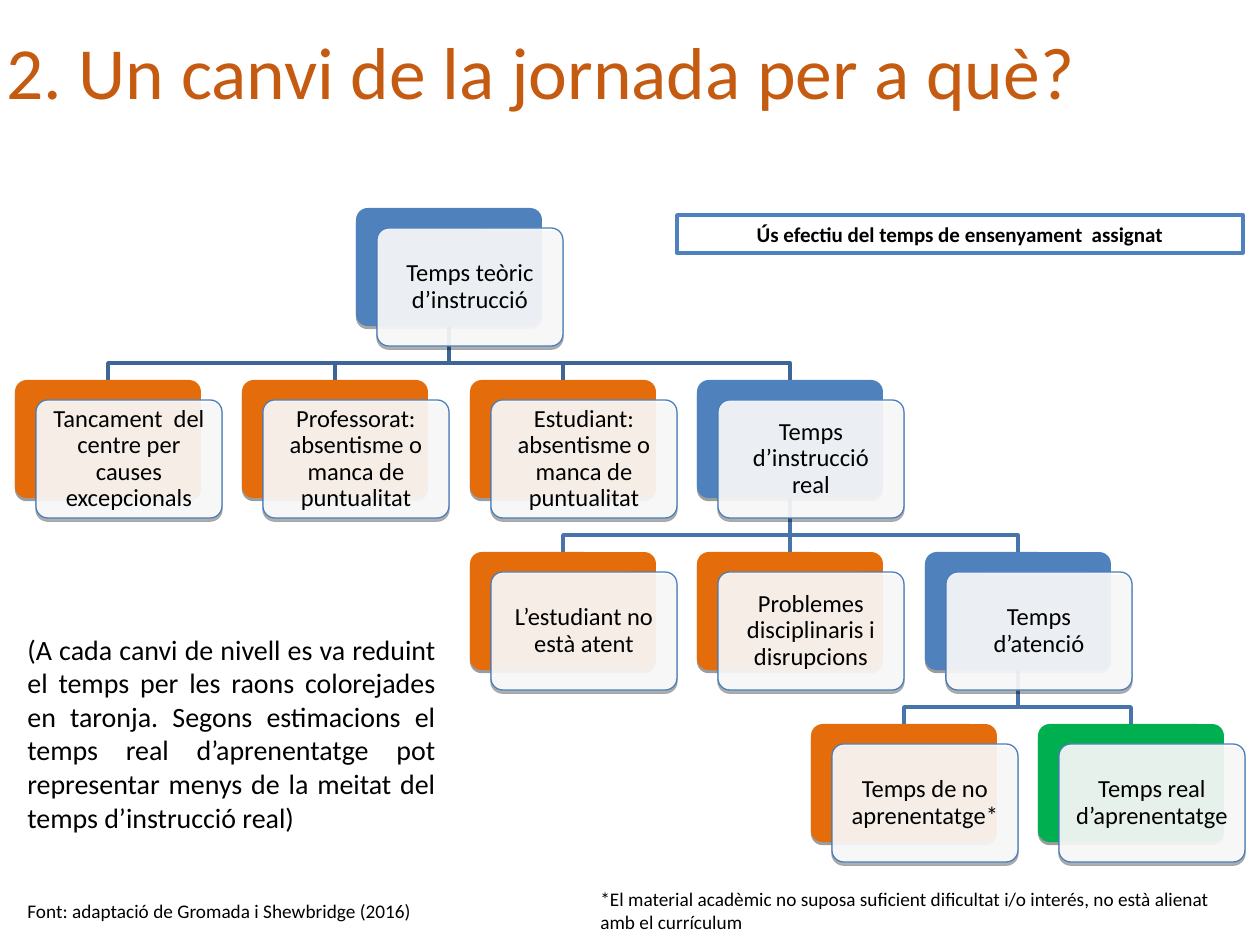
from lxml import etree
from pptx import Presentation
from pptx import util as u
from pptx.dml import color
from pptx.enum import shapes, text
from pptx.oxml import ns

SCALE = 914400 / 126
COLORS = {
    "blue": "4F81BD", "orange": "E46C0A", "green": "00B050", "white": "FFFFFF",
    "black": "000000", "edge": "4A7EBB", "title": "C55A11",
    "upper_link": "3D6696", "lower_link": "4774AB",
}
CARD_W, CARD_H = 186, 118
LEFT, TOP, COLUMN, ROW = 15, 208, 227.4, 172
PANEL_DX, PANEL_DY, TRUNK = 21, 20, 37

CARDS = {
    "theory": (1.5, 0, "blue", "Temps teòric d’instrucció"),
    "closure": (0, 1, "orange", "Tancament  del centre per causes excepcionals"),
    "teachers": (1, 1, "orange", "Professorat: absentisme o manca de puntualitat"),
    "student": (2, 1, "orange", "Estudiant: absentisme o manca de puntualitat"),
    "instruction": (3, 1, "blue", "Temps d’instrucció real"),
    "inattentive": (2, 2, "orange", "L’estudiant no està atent"),
    "disruptions": (3, 2, "orange", "Problemes disciplinaris i disrupcions"),
    "attention": (4, 2, "blue", "Temps d’atenció"),
    "no_learning": (3.5, 3, "orange", "Temps de no aprenentatge*"),
    "learning": (4.5, 3, "green", "Temps real d’aprenentatge"),
}
LINKS = [
    ("theory", ["closure", "teachers", "student", "instruction"], "upper_link"),
    ("instruction", ["inattentive", "disruptions", "attention"], "lower_link"),
    ("attention", ["no_learning", "learning"], "lower_link"),
]


def px(length):
    return u.Emu(round(length * SCALE))


class SlidePainter:
    """Draws the styled elements of the teaching-time tree on one slide."""

    def __init__(self, slide, font="Calibri"):
        self.slide = slide
        self.font = font

    def rgb(self, name):
        return color.RGBColor.from_string(COLORS[name])

    def set_text(self, frame, words, size, ink="black", align=text.PP_ALIGN.LEFT, bold=False):
        frame.word_wrap = True
        para = frame.paragraphs[0]
        para.text = words
        para.alignment = align
        para.font.name = self.font
        para.font.size = u.Pt(size)
        para.font.bold = bold
        para.font.color.rgb = self.rgb(ink)
        return para

    def label(self, area, words, size, anchor=text.MSO_ANCHOR.TOP, **style):
        box = self.slide.shapes.add_textbox(*map(px, area))
        box.text_frame.vertical_anchor = anchor
        self.set_text(box.text_frame, words, size, **style)

    def block(self, kind, area, fill, edge=None, width=0.75):
        box = self.slide.shapes.add_shape(kind, *map(px, area))
        box.shadow.inherit = False
        box.fill.solid()
        box.fill.fore_color.rgb = self.rgb(fill)
        if edge:
            box.line.color.rgb = self.rgb(edge)
            box.line.width = u.Pt(width)
        else:
            box.line.fill.background()
        return box

    def rounded(self, area, fill, edge=None, shade=35):
        box = self.block(shapes.MSO_SHAPE.ROUNDED_RECTANGLE, area, fill, edge)
        box.adjustments[0] = 0.1
        effects = box.element.spPr.find(ns.qn("a:effectLst"))
        shadow = etree.SubElement(effects, ns.qn("a:outerShdw"), blurRad="0",
                                  dist=str(u.Pt(1.8)), dir="5400000", rotWithShape="0")
        tone = etree.SubElement(shadow, ns.qn("a:srgbClr"), val=COLORS["black"])
        etree.SubElement(tone, ns.qn("a:alpha"), val=str(shade * 1000))
        return box

    def card(self, column, row, fill, words):
        left, top = round(LEFT + COLUMN * column), TOP + ROW * row
        back = self.rounded((left, top, CARD_W, CARD_H), fill, shade=38 if row else 35)
        panel = self.rounded((left + PANEL_DX, top + PANEL_DY, CARD_W, CARD_H), "white", "edge")
        tone = panel.element.spPr.find(ns.qn("a:solidFill"))[0]
        etree.SubElement(tone, ns.qn("a:alpha"), val="90000")
        frame = panel.text_frame
        frame.margin_left = frame.margin_right = px(11)
        frame.margin_top = frame.margin_bottom = px(11)
        frame.vertical_anchor = text.MSO_ANCHOR.MIDDLE
        para = self.set_text(frame, words, 14, align=text.PP_ALIGN.CENTER)
        para.line_spacing = 0.9
        para.space_after = u.Pt(7)
        return back

    def link(self, parent, child, ink):
        start, end = [round((card.left + card.width / 2) / SCALE) for card in (parent, child)]
        bottom = round((parent.top + parent.height) / SCALE)
        top = round(child.top / SCALE)
        if start == end:
            line = self.slide.shapes.add_connector(
                shapes.MSO_CONNECTOR.STRAIGHT, px(start), px(bottom), px(end), px(top))
            line.begin_connect(parent, 2)
            line.end_connect(child, 0)
            etree.SubElement(line.element.spPr, ns.qn("a:effectLst"))
        else:
            bar = bottom + TRUNK
            builder = self.slide.shapes.build_freeform(start, bottom, SCALE)
            builder.add_line_segments([(start, bar), (end, bar), (end, top)], close=False)
            line = builder.convert_to_shape()
            line.fill.background()
            line.shadow.inherit = False
        line.line.color.rgb = self.rgb(ink)
        line.line.width = u.Pt(2)
        line.element.getparent().insert(2, line.element)

    def banner(self, area, words):
        box = self.block(shapes.MSO_SHAPE.RECTANGLE, area, "white", "blue", 2)
        self.set_text(box.text_frame, words, 12, align=text.PP_ALIGN.CENTER, bold=True)


def main():
    deck = Presentation()
    deck.slide_width, deck.slide_height = px(1260), px(945)
    painter = SlidePainter(deck.slides.add_slide(deck.slide_layouts[6]))

    cards = {name: painter.card(*details) for name, details in CARDS.items()}
    for parent, children, ink in LINKS:
        for child in children:
            painter.link(cards[parent], cards[child], ink)

    painter.label((588, 881, 645, 59),
                  "*El material acadèmic no suposa suficient dificultat i/o interés, "
                  "no està alienat amb el currículum", 11)
    painter.label((15, 893, 595, 37), "Font: adaptació de Gromada i Shewbridge (2016)", 11)
    painter.banner((677, 215, 566, 38), "Ús efectiu del temps de ensenyament  assignat")
    painter.label((-6, -9, 1134, 158), "2. Un canvi de la jornada per a què?", 42,
                  anchor=text.MSO_ANCHOR.MIDDLE, ink="title")
    painter.label((15, 626, 433, 236),
                  "(A cada canvi de nivell es va reduint el temps per les raons colorejades "
                  "en taronja. Segons estimacions el temps real d’aprenentatge pot "
                  "representar menys de la meitat del temps d’instrucció real)", 16,
                  align=text.PP_ALIGN.JUSTIFY)
    deck.save("out.pptx")


if __name__ == "__main__":
    main()
